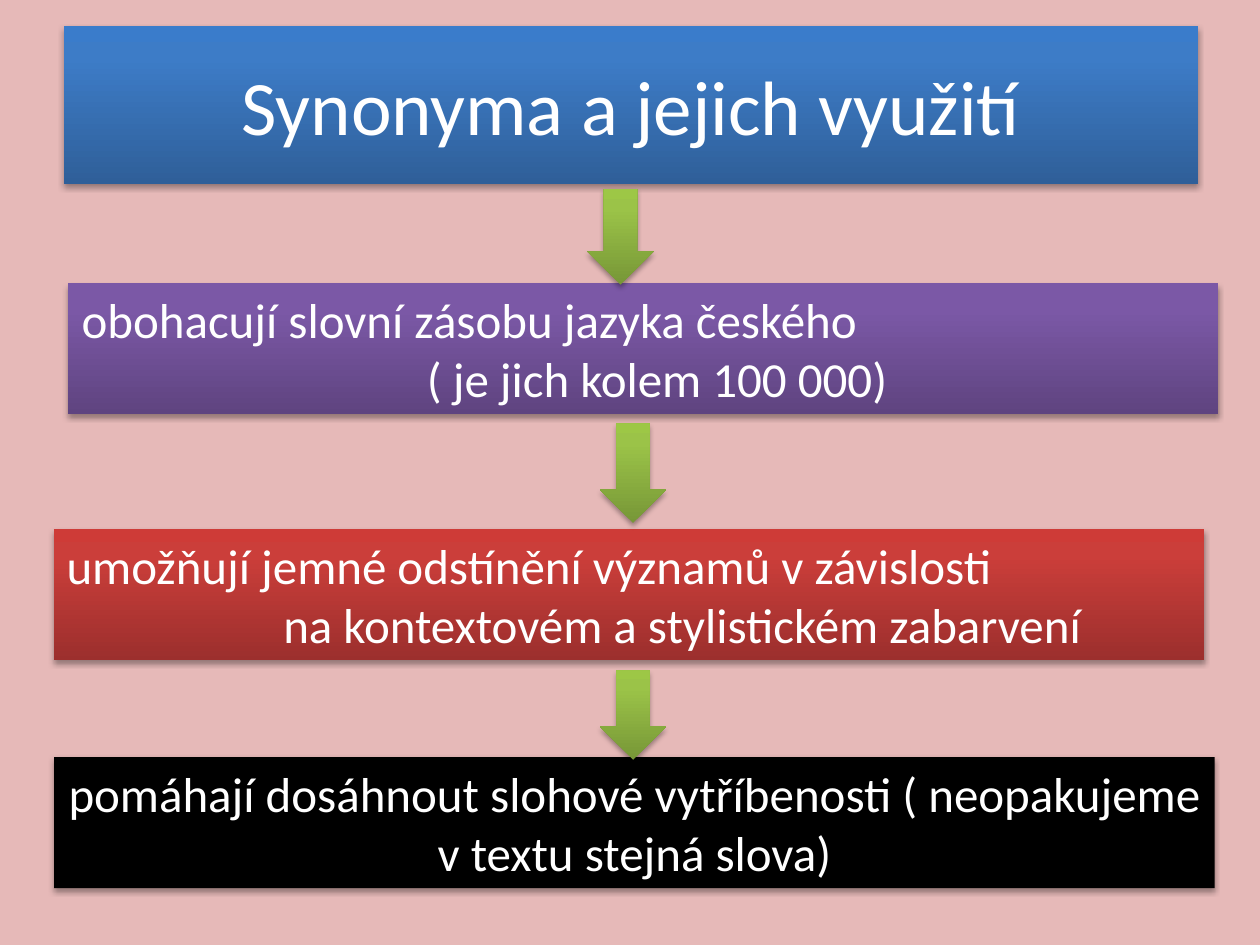
from copy import deepcopy
from dataclasses import dataclass

from lxml import etree
from pptx import Presentation
from pptx.dml.color import RGBColor
from pptx.enum.shapes import MSO_SHAPE
from pptx.enum.text import MSO_ANCHOR, MSO_AUTO_SIZE, PP_ALIGN
from pptx.oxml.ns import qn
from pptx.util import Inches, Pt

RECTANGLE = MSO_SHAPE.RECTANGLE
DOWN_ARROW = MSO_SHAPE.DOWN_ARROW
LEFT, CENTER = PP_ALIGN.LEFT, PP_ALIGN.CENTER
MIDDLE = MSO_ANCHOR.MIDDLE
GROW = MSO_AUTO_SIZE.SHAPE_TO_FIT_TEXT
TITLE_ONLY = 5


@dataclass(frozen=True)
class Theme:
    """Colours, font and type sizes of the slide."""
    background: str = "E6B9B8"
    text: str = "FFFFFF"
    shadow: str = "000000"
    blue: tuple = ("2F5F99", "3D7CC7", "3A7CCB")
    purple: tuple = ("5F4480", "7B58A6", "7C57A8")
    red: tuple = ("9C2F2D", "CB3E3A", "CE3B37")
    green: tuple = ("779737", "9BC348", "9DC746")
    black: tuple = ("000000",)
    stops: tuple = (0, 0.8, 1)
    font: str = "Calibri"
    title_size: int = 44
    body_size: int = 28


THEME = Theme()


def place(shape, left, top, width, height):
    """Set a shape's position and size in inches."""
    shape.left, shape.top = Inches(left), Inches(top)
    shape.width, shape.height = Inches(width), Inches(height)


def paint(shape, colours):
    """Fill a shape with one colour or an upward gradient."""
    fill = shape.fill
    if len(colours) == 1:
        fill.solid()
        fill.fore_color.rgb = RGBColor.from_string(colours[0])
        return
    fill.gradient()
    fill.gradient_angle = 90
    stop_list = shape._element.spPr.find(qn("a:gradFill")).find(qn("a:gsLst"))
    stop_list.append(deepcopy(stop_list[-1]))
    for stop, position, colour in zip(fill.gradient_stops, THEME.stops, colours):
        stop.position = position
        stop.color.rgb = RGBColor.from_string(colour)


def add_shadow(shape):
    """Give a shape a soft shadow straight below it."""
    shape.shadow.inherit = False
    effects = shape._element.spPr.find(qn("a:effectLst"))
    shadow = etree.SubElement(
        effects, qn("a:outerShdw"), blurRad=str(Pt(3.1)), dist=str(Pt(1.8)),
        dir="5400000", rotWithShape="0")
    colour = etree.SubElement(shadow, qn("a:srgbClr"), val=THEME.shadow)
    etree.SubElement(colour, qn("a:alpha"), val="35000")


def style(shape, colours):
    """Apply fill and shadow, without an outline."""
    paint(shape, colours)
    shape.line.fill.background()
    add_shadow(shape)


def write(para, text, size=THEME.body_size, align=CENTER, indent=0):
    """Write formatted text into a paragraph."""
    para.alignment = align
    para._p.get_or_add_pPr().set("marL", str(Inches(indent)))
    span = para.add_run()
    span.text = text
    span.font.size = Pt(size)
    span.font.name = THEME.font
    span.font.color.rgb = RGBColor.from_string(THEME.text)


def set_title(page, text):
    """Place and format the title banner."""
    title = page.shapes.title
    place(title, 0.51, 0.21, 9, 1.25)
    style(title, THEME.blue)
    title.text_frame.vertical_anchor = MIDDLE
    write(title.text_frame.paragraphs[0], text, size=THEME.title_size)


def add_box(page, bounds, colours, lines):
    """Add a text box of lines, each with its own format."""
    box = page.shapes.add_shape(RECTANGLE, *map(Inches, bounds))
    style(box, colours)
    frame = box.text_frame
    frame.word_wrap = True
    frame.auto_size = GROW
    frame.vertical_anchor = MSO_ANCHOR.TOP
    for number, (text, options) in enumerate(lines):
        para = frame.add_paragraph() if number else frame.paragraphs[0]
        write(para, text, **options)


def add_arrow(page, left, top, height):
    """Add a downward arrow between two boxes."""
    arrow = page.shapes.add_shape(
        DOWN_ARROW, Inches(left), Inches(top), Inches(0.53), Inches(height))
    style(arrow, THEME.green)


def main():
    """Build and save the slide."""
    deck = Presentation()
    deck.slide_width, deck.slide_height = Inches(10), Inches(7.5)
    page = deck.slides.add_slide(deck.slide_layouts[TITLE_ONLY])
    page.background.fill.solid()
    page.background.fill.fore_color.rgb = RGBColor.from_string(THEME.background)

    set_title(page, "Synonyma a jejich využití")
    boxes = [
        ((0.54, 2.25, 9.13, 1.04), THEME.purple, [
            ("obohacují slovní zásobu jazyka českého", dict(align=LEFT, indent=0.01)),
            ("( je jich kolem 100 000)", dict(align=LEFT, indent=2.75))]),
        ((0.43, 4.2, 9.13, 1.04), THEME.red, [
            ("umožňují jemné odstínění významů v závislosti", dict(align=LEFT)),
            ("na kontextovém a stylistickém zabarvení", dict(align=LEFT, indent=1.72))]),
        ((0.43, 6.01, 9.21, 1.04), THEME.black, [
            ("pomáhají dosáhnout slohové vytříbenosti ( neopakujeme "
             "v textu stejná slova)", {})]),
    ]
    for bounds, colours, lines in boxes:
        add_box(page, bounds, colours, lines)
    for left, top, height in [(4.66, 1.5, 0.76), (4.76, 3.36, 0.79), (4.76, 5.32, 0.71)]:
        add_arrow(page, left, top, height)
    deck.save("out.pptx")


if __name__ == "__main__":
    main()
